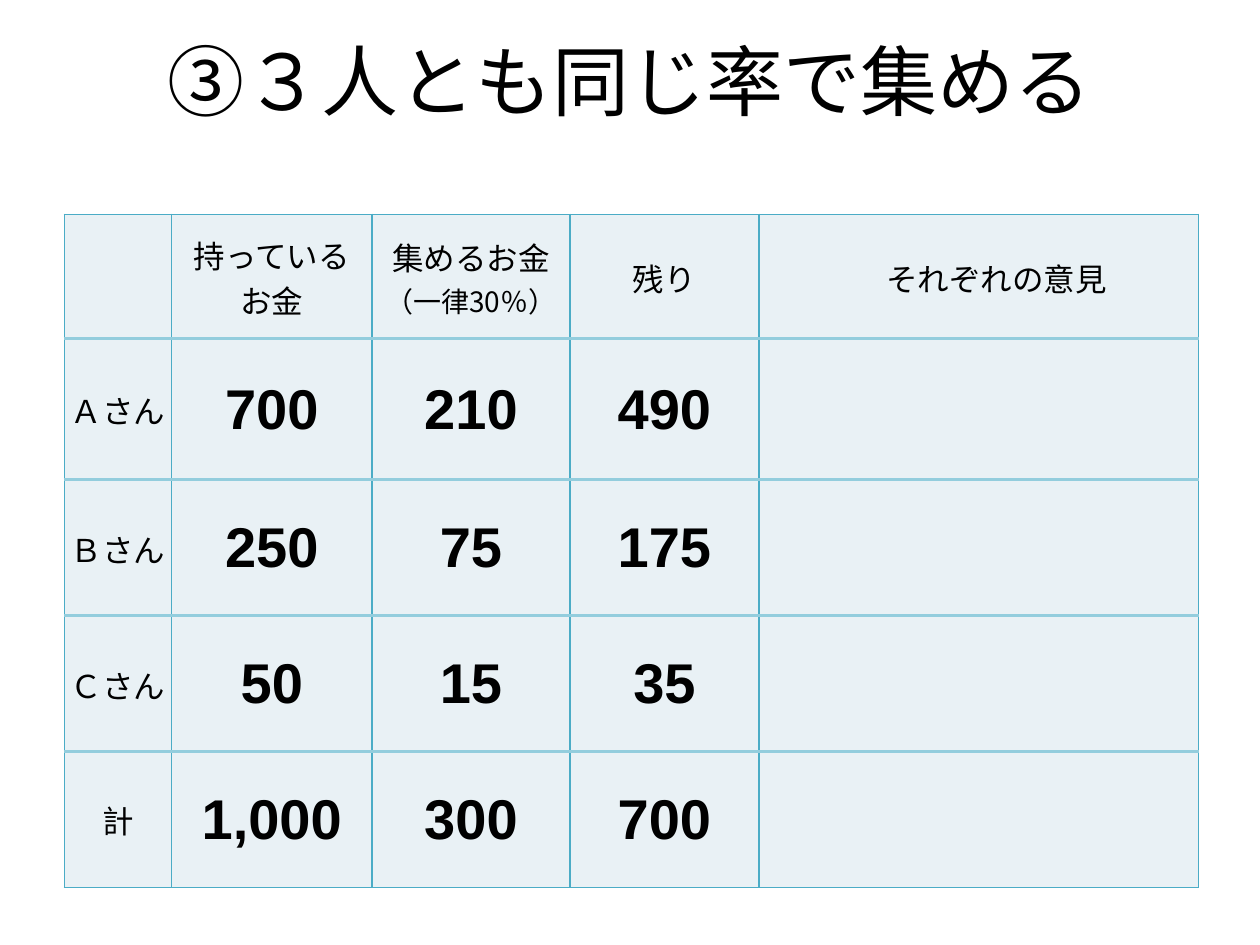
import lxml.etree
import pptx
import pptx.dml.color
import pptx.enum.text
import pptx.oxml.ns
import pptx.util

Cm = pptx.util.Cm
Pt = pptx.util.Pt
RGBColor = pptx.dml.color.RGBColor
ALIGN = pptx.enum.text.PP_ALIGN
MIDDLE = pptx.enum.text.MSO_ANCHOR.MIDDLE
qn = pptx.oxml.ns.qn

BLACK = RGBColor(0, 0, 0)
CELL_FILL = RGBColor(0xE9, 0xF1, 0xF5)
TEAL = RGBColor(0x4B, 0xAC, 0xC6)
LIGHT_BLUE = RGBColor(0x93, 0xCD, 0xDD)
JAPANESE = "Noto Sans CJK JP"
NUMERIC = "Arial"

COLUMN_WIDTHS = [2.16, 4.04, 3.99, 3.81, 8.86]
ROW_HEIGHTS = [2.51, 2.84, 2.74, 2.74, 2.74]
# Each header cell lists its lines with their sizes
HEADERS = [
    [],
    [("持っている", 18), ("お金", 18)],
    [("集めるお金", 18), ("（一律30％）", 16)],
    [("残り", 18)],
    [("それぞれの意見", 18)],
]
PEOPLE = [
    ("Ａさん", "700", "210", "490"),
    ("Ｂさん", "250", "75", "175"),
    ("Ｃさん", "50", "15", "35"),
    ("計", "1,000", "300", "700"),
]


def write(p, text, size=18, font=JAPANESE, bold=False, color=BLACK,
          align=ALIGN.CENTER, indent=None):
    p.alignment = align
    if indent is not None:
        p._p.get_or_add_pPr().set("marL", str(int(indent)))
    r = p.add_run()
    r.text = text
    r.font.size = Pt(size)
    r.font.bold = bold
    r.font.color.rgb = color
    r.font.name = font
    ea = lxml.etree.SubElement(r._r.get_or_add_rPr(), qn("a:ea"))
    ea.set("typeface", JAPANESE)


def add_border(cell, side, color, width):
    tc_pr = cell._tc.get_or_add_tcPr()
    ln = lxml.etree.SubElement(tc_pr, qn("a:" + side), w=str(int(Pt(width))))
    fill = lxml.etree.SubElement(ln, qn("a:solidFill"))
    lxml.etree.SubElement(fill, qn("a:srgbClr"), val=str(color))


def format_cell(cell, first, last):
    cell.margin_left = cell.margin_right = cell.margin_top = Cm(0.03)
    cell.margin_bottom = 0
    cell.vertical_anchor = MIDDLE
    outer, inner = (TEAL, 1), (LIGHT_BLUE, 2.25)
    add_border(cell, "lnL", *outer)
    add_border(cell, "lnR", *outer)
    add_border(cell, "lnT", *(outer if first else inner))
    add_border(cell, "lnB", *(outer if last else inner))
    cell.fill.solid()
    cell.fill.fore_color.rgb = CELL_FILL


def set_title(s, text):
    sp = s.shapes.title
    sp.left, sp.top, sp.width, sp.height = 0, 0, Cm(25.4), Cm(3.23)
    tf = sp.text_frame
    tf.vertical_anchor = MIDDLE
    write(tf.paragraphs[0], text, size=44)


def add_money_table(s):
    rows, cols = len(ROW_HEIGHTS), len(COLUMN_WIDTHS)
    table = s.shapes.add_table(
        rows, cols, Cm(1.3), Cm(4.32),
        Cm(sum(COLUMN_WIDTHS)), Cm(sum(ROW_HEIGHTS))).table
    table.first_row = table.horz_banding = False
    for column, width in zip(table.columns, COLUMN_WIDTHS):
        column.width = Cm(width)
    for i, (row, height) in enumerate(zip(table.rows, ROW_HEIGHTS)):
        row.height = Cm(height)
        for cell in row.cells:
            format_cell(cell, i == 0, i == rows - 1)

    # Header row; the opinions heading is indented from the left
    for c, lines in enumerate(HEADERS):
        tf = table.cell(0, c).text_frame
        layout = {}
        if c == cols - 1:
            layout = {"align": ALIGN.LEFT, "indent": Cm(2.54)}
        for i, (text, size) in enumerate(lines):
            p = tf.add_paragraph() if i else tf.paragraphs[0]
            write(p, text, size=size, **layout)

    # Names and amounts
    for i, (name, *amounts) in enumerate(PEOPLE, start=1):
        write(table.cell(i, 0).text_frame.paragraphs[0], name)
        for c, amount in enumerate(amounts, start=1):
            write(table.cell(i, c).text_frame.paragraphs[0], amount,
                  size=32, font=NUMERIC, bold=True)


def main():
    prs = pptx.Presentation()
    prs.slide_width, prs.slide_height = Cm(25.4), Cm(19.05)
    s = prs.slides.add_slide(prs.slide_layouts[5])
    set_title(s, "③３人とも同じ率で集める")
    add_money_table(s)
    prs.save("out.pptx")


if __name__ == "__main__":
    main()
